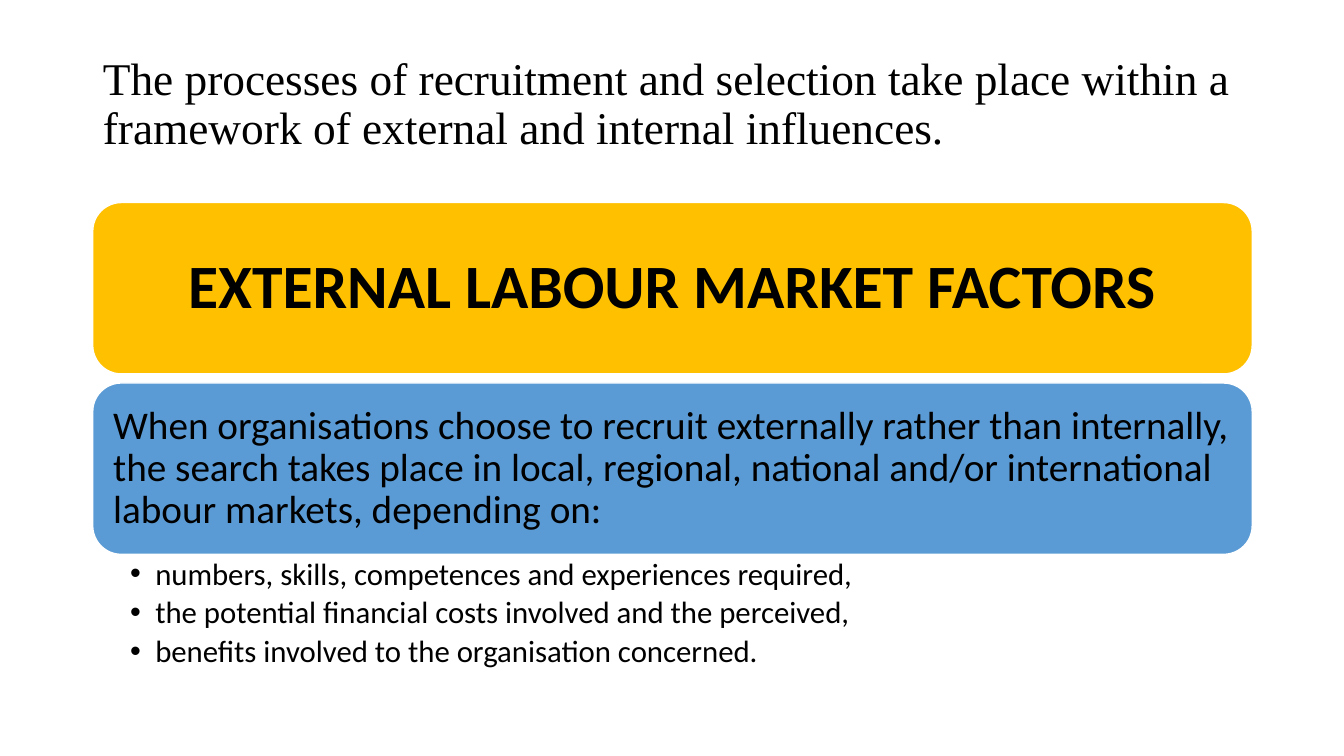
"""Build a slide on external labour market factors in recruitment."""

from dataclasses import dataclass

import pptx
import pptx.dml.color
import pptx.enum.shapes
import pptx.enum.text
import pptx.oxml.ns
import pptx.shapes.base
import pptx.slide
import pptx.text.text
import pptx.util
from lxml import etree

Inches = pptx.util.Inches
Align = pptx.enum.text.PP_ALIGN
COLOURS = {"text": "000000", "banner": "FFC000", "statement": "5B9BD5", "edge": "FFFFFF"}
LEFT, WIDTH = 0.92, 11.5
PANEL_TOP, PANEL_HEIGHT, PANEL_PITCH = 2.01, 1.7, 1.79
TITLE = (
    "The processes of recruitment and selection take place within a "
    "framework of external and internal influences."
)
BULLETS = (
    "numbers, skills, competences and experiences required,",
    "the potential financial costs involved and the perceived,",
    "benefits involved to the organisation concerned.",
)


@dataclass(frozen=True)
class Panel:
    text: str
    fill: str
    size: float
    inset: float
    bold: bool = False
    align: Align = Align.LEFT


PANELS = (
    Panel("EXTERNAL LABOUR MARKET FACTORS", "banner", 44, 0.18, True, Align.CENTER),
    Panel(
        "When organisations choose to recruit externally rather than internally, "
        "the search takes place in local, regional, national and/or international "
        "labour markets, depending on:",
        "statement", 28, 0.12,
    ),
)


def colour(name: str) -> pptx.dml.color.RGBColor:
    return pptx.dml.color.RGBColor.from_string(COLOURS[name])


def place(box: pptx.shapes.base.BaseShape, top: float, height: float) -> None:
    box.left, box.top = Inches(LEFT), Inches(top)
    box.width, box.height = Inches(WIDTH), Inches(height)


def set_frame(
    frame: pptx.text.text.TextFrame,
    insets: tuple[float, float, float, float],
    anchor: pptx.enum.text.MSO_ANCHOR = pptx.enum.text.MSO_ANCHOR.MIDDLE,
) -> None:
    frame.word_wrap = True
    frame.auto_size = pptx.enum.text.MSO_AUTO_SIZE.NONE
    frame.vertical_anchor = anchor
    frame.margin_left, frame.margin_top, frame.margin_right, frame.margin_bottom = map(
        Inches, insets
    )


def add_text(
    frame: pptx.text.text.TextFrame,
    text: str,
    *,
    size: float,
    font: str = "Calibri",
    bold: bool = False,
    align: Align = Align.LEFT,
    space_after: float = 0,
    bullet: bool = False,
) -> None:
    para = frame.paragraphs[0] if not frame.text else frame.add_paragraph()
    if bullet:
        properties = para._p.get_or_add_pPr()
        properties.set("marL", str(Inches(0.25)))
        properties.set("indent", str(Inches(-0.25)))
        mark = etree.SubElement(properties, pptx.oxml.ns.qn("a:buChar"))
        mark.set("char", "•")
    para.alignment = align
    para.line_spacing = 0.9
    para.space_before = pptx.util.Pt(0)
    para.space_after = pptx.util.Pt(space_after)
    span = para.add_run()
    span.text = text
    span.font.name = font
    span.font.size = pptx.util.Pt(size)
    span.font.bold = bold
    span.font.color.rgb = colour("text")


def add_panel(page: pptx.slide.Slide, panel: Panel, top: float) -> None:
    box = page.shapes.add_shape(
        pptx.enum.shapes.MSO_SHAPE.ROUNDED_RECTANGLE,
        Inches(LEFT), Inches(top), Inches(WIDTH), Inches(PANEL_HEIGHT),
    )
    box.shadow.inherit = False
    box.fill.solid()
    box.fill.fore_color.rgb = colour(panel.fill)
    box.line.color.rgb = colour("edge")
    box.line.width = pptx.util.Pt(1)
    set_frame(box.text_frame, (panel.inset,) * 4)
    add_text(
        box.text_frame, panel.text, size=panel.size, bold=panel.bold, align=panel.align
    )


def main() -> None:
    deck = pptx.Presentation()
    deck.slide_width, deck.slide_height = Inches(13.33), Inches(7.5)
    page = deck.slides.add_slide(deck.slide_layouts[1])

    title = page.shapes.title
    place(title, 0.4, 1.45)
    set_frame(title.text_frame, (0.1, 0.05, 0.1, 0.22))
    add_text(title.text_frame, TITLE, size=32.4, font="Times New Roman")

    for index, panel in enumerate(PANELS):
        add_panel(page, panel, PANEL_TOP + index * PANEL_PITCH)

    body = page.placeholders[1]
    place(body, 5.5, 1.24)
    set_frame(body.text_frame, (0.37, 0.04, 0.22, 0.04), pptx.enum.text.MSO_ANCHOR.TOP)
    for text in BULLETS:
        add_text(body.text_frame, text, size=22, space_after=4, bullet=True)

    deck.save("out.pptx")


if __name__ == "__main__":
    main()
